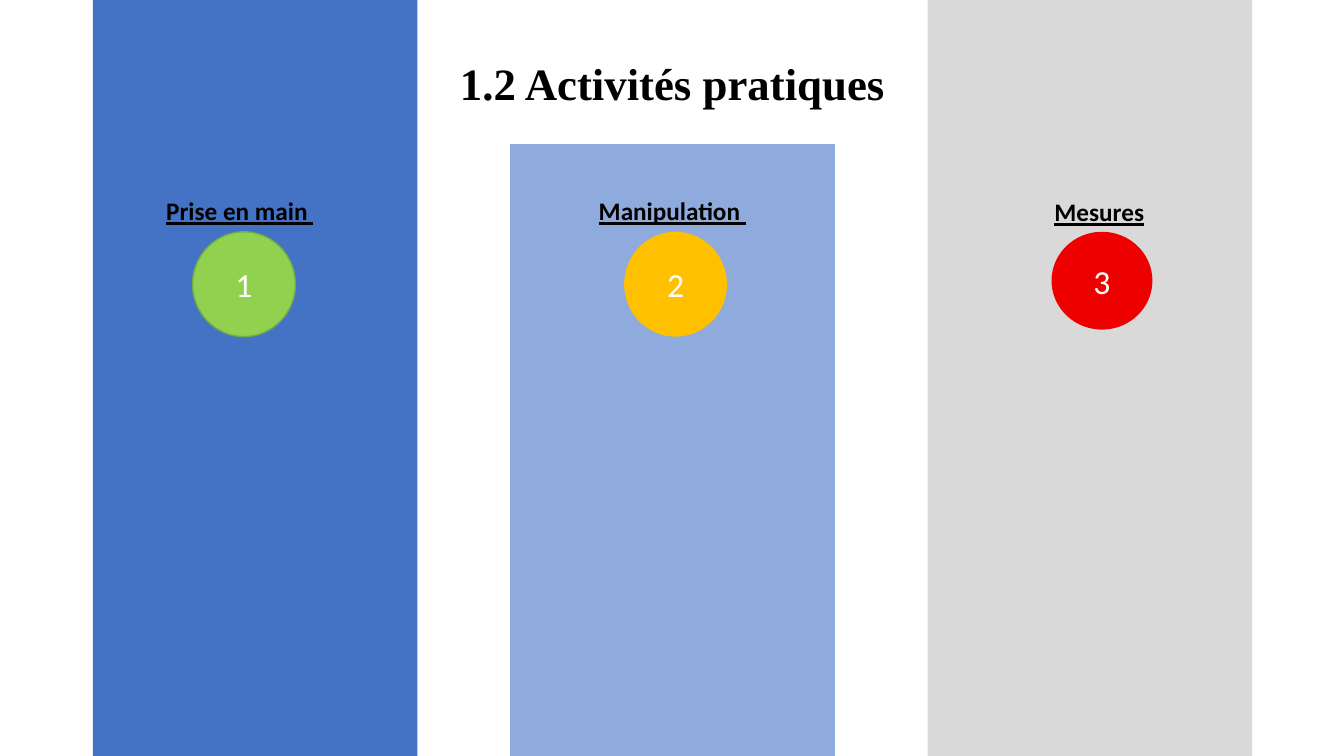
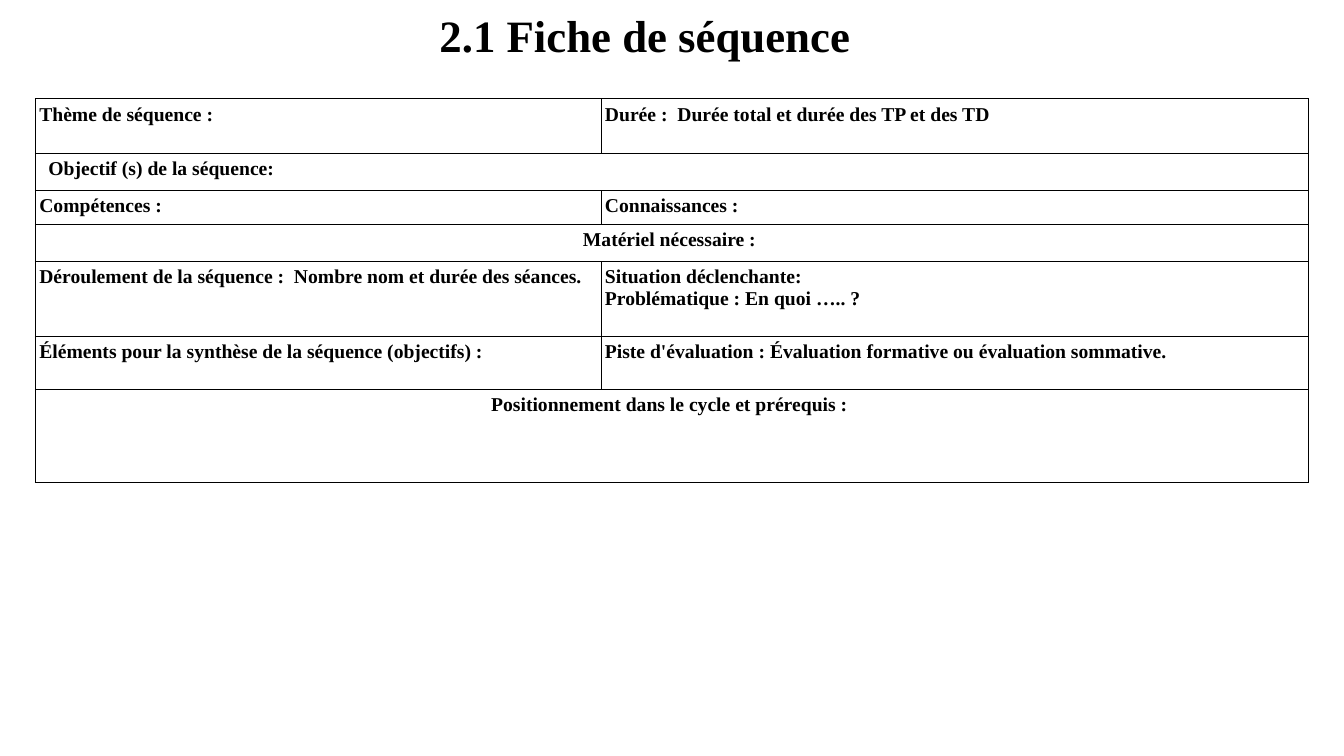
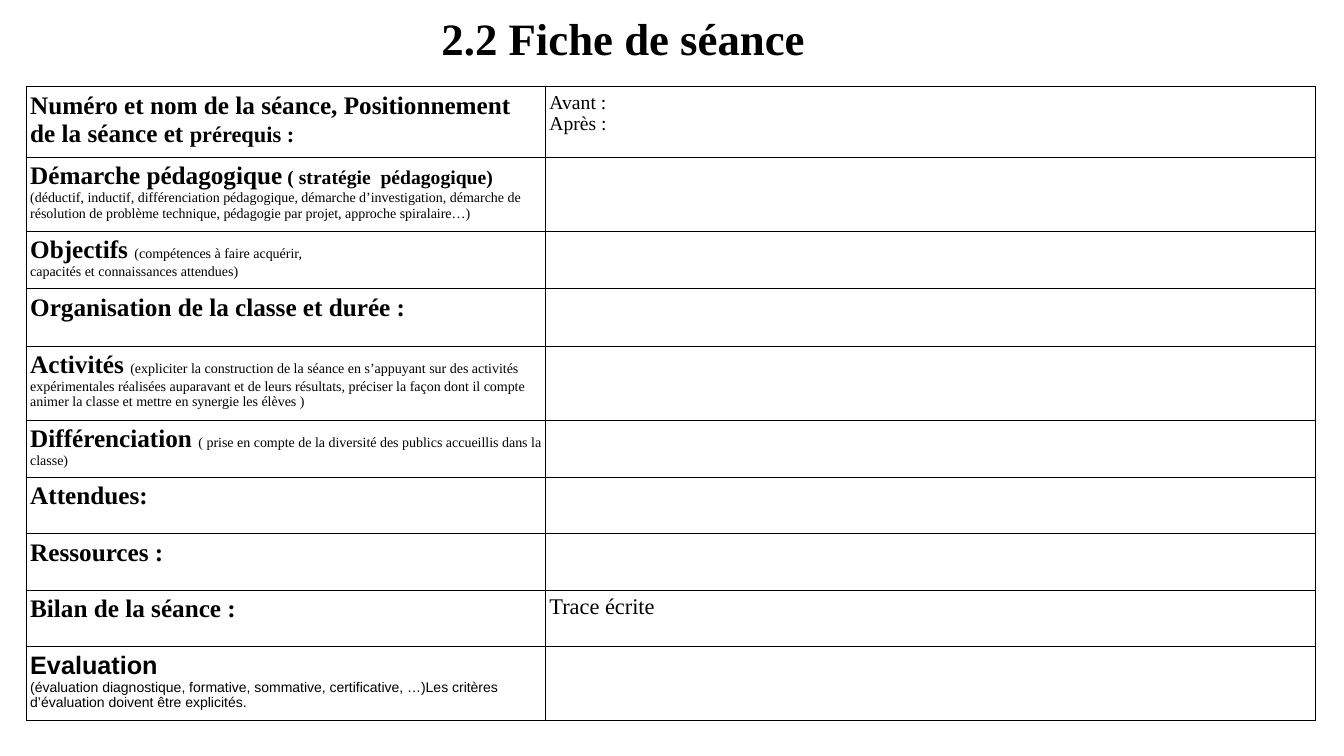
from lxml import etree
from pptx import Presentation
from pptx.dml.color import RGBColor
from pptx.enum.shapes import MSO_SHAPE
from pptx.enum.text import MSO_ANCHOR, PP_ALIGN
from pptx.oxml.ns import qn
from pptx.util import Inches, Pt

RECT, OVAL = MSO_SHAPE.RECTANGLE, MSO_SHAPE.OVAL
TOP, MIDDLE = MSO_ANCHOR.TOP, MSO_ANCHOR.MIDDLE
LEFT, CENTER = PP_ALIGN.LEFT, PP_ALIGN.CENTER
SERIF, SANS, ARIAL = "Times New Roman", "Calibri", "Arial"
BLACK, WHITE = "000000", "FFFFFF"


def color(value):
    return RGBColor.from_string(value)


def add_run(p, text, size=14, font=SERIF, fill=BLACK, bold=False, underline=False):
    r = p.add_run()
    r.text = text
    r.font.size = Pt(size)
    r.font.name = font
    r.font.bold = bold
    r.font.underline = underline
    r.font.color.rgb = color(fill)


def head(text, size=18, font=SERIF):
    return text, {"size": size, "font": font, "bold": True}


def note(text, size=10, font=SERIF):
    return text, {"size": size, "font": font}


class Deck:
    def __init__(self):
        self.prs = Presentation()
        self.prs.slide_width = Inches(13.33)
        self.prs.slide_height = Inches(7.5)
        self.s = None

    def slide(self):
        self.s = self.prs.slides.add_slide(self.prs.slide_layouts[6])

    def text(self, box, text, align=LEFT, anchor=TOP, spacing=1.0, wrap=True, **fmt):
        tf = self.s.shapes.add_textbox(*map(Inches, box)).text_frame
        tf.word_wrap = wrap
        tf.vertical_anchor = anchor
        p = tf.paragraphs[0]
        p.alignment = align
        p.line_spacing = spacing
        add_run(p, text, **fmt)

    def title(self, box, text, align=LEFT, anchor=TOP, spacing=0.9):
        self.text(box, text, align, anchor, spacing, size=32, bold=True)

    def shape(self, kind, box, fill, line=None):
        sp = self.s.shapes.add_shape(kind, *map(Inches, box))
        sp.shadow.inherit = False
        sp.fill.solid()
        sp.fill.fore_color.rgb = color(fill)
        if line:
            sp.line.color.rgb = color(line)
            sp.line.width = Pt(1)
        else:
            sp.line.fill.background()
        return sp

    def badge(self, box, number, fill, line=None):
        tf = self.shape(OVAL, box, fill, line).text_frame
        tf.vertical_anchor = MIDDLE
        p = tf.paragraphs[0]
        p.alignment = CENTER
        add_run(p, str(number), size=24, font=SANS, fill=WHITE)

    def borders(self, cell):
        tcPr = cell._tc.get_or_add_tcPr()
        for i, side in enumerate(("lnL", "lnR", "lnT", "lnB")):
            ln = etree.Element(qn(f"a:{side}"), w=str(Pt(0.57)))
            solid = etree.SubElement(ln, qn("a:solidFill"))
            etree.SubElement(solid, qn("a:srgbClr"), val=BLACK)
            tcPr.insert(i, ln)

    def cell(self, cell, paragraphs, align=LEFT, left=0.04):
        cell.margin_left, cell.margin_right = Inches(left), Inches(0.04)
        cell.margin_top = cell.margin_bottom = Inches(0.05)
        tf = cell.text_frame
        for i, runs in enumerate(paragraphs):
            p = tf.add_paragraph() if i else tf.paragraphs[0]
            p.alignment = align
            for text, fmt in runs:
                add_run(p, text, **fmt)

    def table(self, left, top, widths, heights):
        box = map(Inches, (left, top, sum(widths), sum(heights)))
        table = self.s.shapes.add_table(len(heights), len(widths), *box).table
        table.first_row = table.horz_banding = False
        for column, width in zip(table.columns, widths):
            column.width = Inches(width)
        for row, height in zip(table.rows, heights):
            row.height = Inches(height)
        for cell in table.iter_cells():
            cell.fill.background()
            self.borders(cell)
        return table


def activities(deck):
    deck.slide()
    columns = [
        (0, "4472C4", (1.91, 2.3, 1.02, 1.04), "92D050", "70AD47",
         (1.55, 1.89, 1.67, 0.4), "Prise en main "),
        (1.43, "8FAADC", (6.19, 2.3, 1.02, 1.04), "FFC000", None,
         (5.84, 1.89, 1.73, 0.4), "Manipulation "),
        (0, "D9D9D9", (10.43, 2.3, 1, 0.97), "EE0000", None,
         (10.36, 1.9, 1.13, 0.38), "Mesures"),
    ]
    for i, (top, band, circle, fill, line, label, text) in enumerate(columns):
        deck.shape(RECT, (0.92 + i * 4.14, top, 3.22, 7.5 - top), band)
        deck.badge(circle, i + 1, fill, line)
        deck.text(label, text, wrap=False, size=18, font=SANS, bold=True, underline=True)
    deck.title((0.92, 0.13, 11.5, 1.45), "1.2 Activités pratiques", CENTER, MIDDLE)


def sequence_sheet(deck):
    deck.slide()
    deck.title((4.26, 0.09, 4.82, 0.7), "2.1 Fiche de séquence")
    rows = [
        (0.54, ["Thème de séquence :"], ["Durée :  Durée total et durée des TP et des TD"]),
        (0.37, ["Objectif (s) de la séquence:"], None),
        (0.31, ["Compétences :"], ["Connaissances :"]),
        (0.37, ["Matériel nécessaire : "], None),
        (0.74, ["Déroulement de la séquence :  Nombre nom et durée des séances."],
         ["Situation déclenchante:", "Problématique : En quoi ….. ?"]),
        (0.53, ["Éléments pour la synthèse de la séquence (objectifs) :"],
         ["Piste d'évaluation : Évaluation formative ou évaluation sommative."]),
        (0.92, ["Positionnement dans le cycle et prérequis : "], None),
    ]
    table = deck.table(0.35, 0.98, [5.61, 7.02], [row[0] for row in rows])
    for i, (_, *texts) in enumerate(rows):
        merged = texts[1] is None
        if merged:
            table.cell(i, 0).merge(table.cell(i, 1))
        objective = i == 1
        for j, lines in enumerate(texts):
            if lines:
                deck.cell(table.cell(i, j), [[head(line, 14)] for line in lines],
                          CENTER if merged and not objective else LEFT,
                          0.13 if objective else 0.04)


def session_sheet(deck):
    deck.slide()
    deck.title((4.28, 0.2, 4.74, 0.5), "2.2 Fiche de séance", spacing=0.7)
    rows = [
        (0.69, [[head("Numéro et nom de la séance, Positionnement de la séance et "),
                 head("prérequis :", 16)]],
         [[note("Avant :", 14)], [note("Après :", 14)]]),
        (0.68, [[head("Démarche pédagogique"), head(" ( stratégie  pédagogique) ", 14),
                 note("(déductif, inductif, différenciation pédagogique, démarche "
                      "d’investigation, démarche de résolution de problème technique, "
                      "pédagogie par projet, approche spiralaire…)")]], []),
        (0.56, [[head("Objectifs "), note("(compétences à faire acquérir,")],
                [note("capacités et connaissances attendues)")]], []),
        (0.57, [[head("Organisation de la classe et durée :")]], []),
        (0.68, [[head("Activités "),
                 note("(expliciter la construction de la séance en s’appuyant sur des "
                      "activités expérimentales réalisées auparavant et de leurs résultats, "
                      "préciser la façon dont il compte animer la classe et mettre en "
                      "synergie les élèves )")]], []),
        (0.56, [[head("Différenciation "),
                 note("( prise en compte de la diversité des publics accueillis "
                      "dans la classe)")]], []),
        (0.56, [[head("Attendues:")]], []),
        (0.56, [[head("Ressources :")]], []),
        (0.56, [[head("Bilan de la séance :")]], [[note("Trace écrite", 16)]]),
        (0.69, [[head("Evaluation", font=ARIAL)],
                [note("(évaluation diagnostique, formative, sommative, certificative, …)"
                      "Les critères d’évaluation doivent être explicités.", font=ARIAL)]], []),
    ]
    table = deck.table(0.26, 0.86, [5.15, 7.64], [row[0] for row in rows])
    for i, (_, *cells) in enumerate(rows):
        for j, paragraphs in enumerate(cells):
            deck.cell(table.cell(i, j), paragraphs)


def main():
    deck = Deck()
    activities(deck)
    sequence_sheet(deck)
    session_sheet(deck)
    deck.prs.save("out.pptx")


if __name__ == "__main__":
    main()
